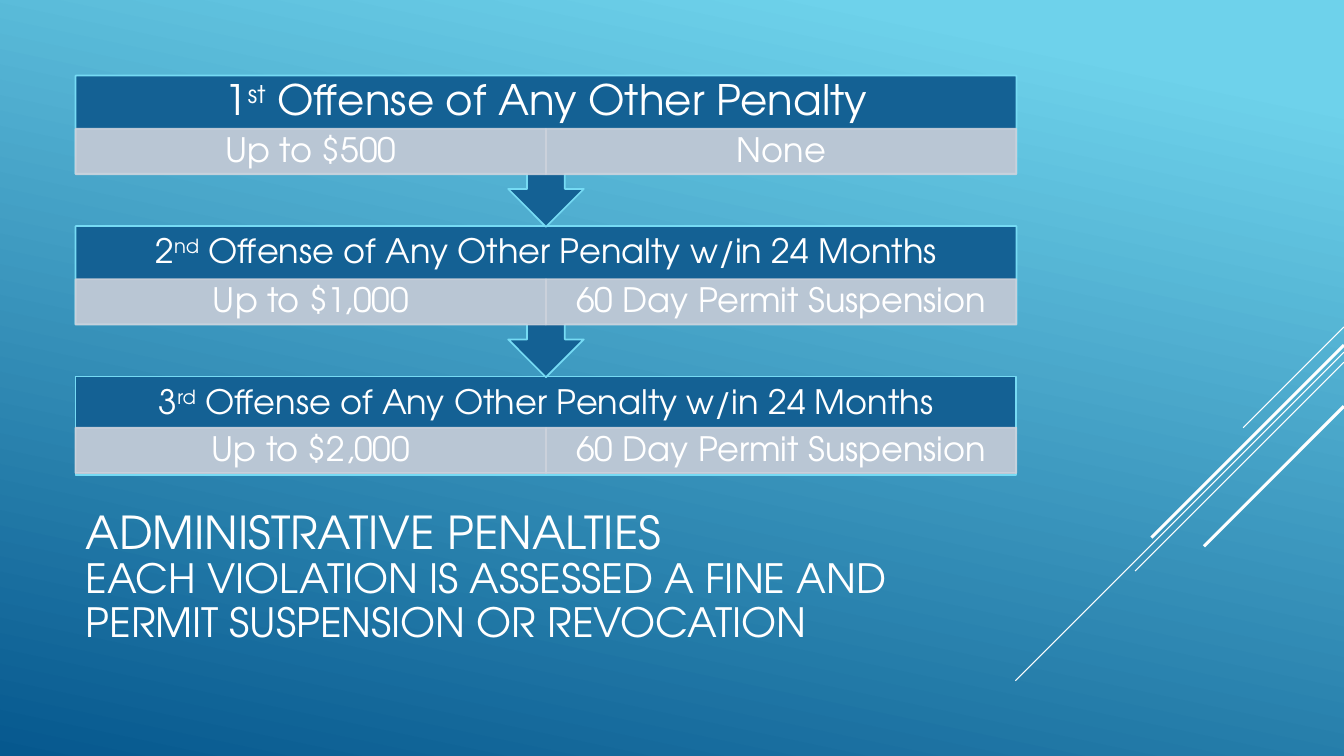
from lxml.etree import SubElement
from pptx import Presentation
from pptx.dml.color import RGBColor
from pptx.enum.shapes import MSO_CONNECTOR as Connector, MSO_SHAPE as Shape
from pptx.enum.text import MSO_ANCHOR as Anchor, PP_ALIGN as Align
from pptx.oxml.ns import qn
from pptx.util import Pt

FONT = "TeX Gyre Adventor"
WHITE, NAVY, AQUA, GRAY = "FFFFFF", "146194", "76DBF4", "CCD2DC"
BOX_LEFT, BOX_TOP, BOX_WIDTH, STEP = 54, 54, 672, 107.5
CALLOUT_HEIGHT, BODY_HEIGHT, HEADER_HEIGHT, CELL_HEIGHT = 108, 70.2, 38, 32.4

OFFENSES = [
    ("1", "st", " Offense of Any Other Penalty", 30, "Up to $500", "None"),
    ("2", "nd", " Offense of Any Other Penalty w/in 24 Months", 24,
     "Up to $1,000", "60 Day Permit Suspension"),
    ("3", "rd", " Offense of Any Other Penalty w/in 24 Months", 24,
     "Up to $2,000", "60 Day Permit Suspension"),
]
STREAKS = [
    (233.5, 72, 0.75),
    (251.5, 234.7, 0.75),
    (258.7, 149.2, 0.75),
    (246.5, 137.5, 2.25),
    (290.2, 100, 2.25),
]


def color(value):
    return RGBColor.from_string(value)


def add_text(paragraph, text, size=24, raised=False):
    run = paragraph.add_run()
    run.text = text
    run.font.size = Pt(size)
    run.font.name = FONT
    run.font.color.rgb = color(WHITE)
    if raised:
        run.font._element.set("baseline", "30000")


def set_frame(shape, margins, align=Align.LEFT, spacing=0.9):
    frame = shape.text_frame
    frame.word_wrap = True
    frame.vertical_anchor = Anchor.MIDDLE
    frame.margin_left, frame.margin_top, frame.margin_right, frame.margin_bottom = map(Pt, margins)
    paragraph = frame.paragraphs[0]
    paragraph.alignment = align
    paragraph.line_spacing = spacing
    return paragraph


def add_box(slide, kind, left, top, width, height, fill, line, opacity=None):
    shape = slide.shapes.add_shape(kind, Pt(left), Pt(top), Pt(width), Pt(height))
    shape.shadow.inherit = False
    shape.fill.solid()
    shape.fill.fore_color.rgb = color(fill)
    shape.line.color.rgb = color(line)
    shape.line.width = Pt(1.25)
    if opacity:
        for tint in shape._element.spPr.iter(qn("a:srgbClr")):
            SubElement(tint, qn("a:alpha"), val=str(opacity * 1000))
    return shape


def add_background(slide):
    fill = slide.background.fill
    fill.gradient()
    fill.gradient_angle = 258
    for stop, position, value in zip(fill.gradient_stops, (0.1, 1), ("6ED2EB", "06588E")):
        stop.position = position
        stop.color.rgb = color(value)


def add_streaks(slide, right):
    for top, length, weight in STREAKS:
        line = slide.shapes.add_connector(
            Connector.STRAIGHT, Pt(right), Pt(top), Pt(right - length), Pt(top + length))
        line.line.color.rgb = color(WHITE)
        line.line.width = Pt(weight)
        SubElement(line._element.spPr, qn("a:effectLst"))


def add_offense(slide, left, top, width, offense, last):
    number, suffix, title, size, *penalties = offense
    kind = Shape.RECTANGLE if last else Shape.DOWN_ARROW_CALLOUT
    height = BODY_HEIGHT if last else CALLOUT_HEIGHT
    header = add_box(slide, kind, left, top, width, height, NAVY, AQUA)
    paragraph = set_frame(header, (14, 0, 14, BODY_HEIGHT - HEADER_HEIGHT), Align.CENTER)
    add_text(paragraph, number, size)
    add_text(paragraph, suffix, size, raised=True)
    add_text(paragraph, title, size)

    cell_top = top + (36.5 if last else HEADER_HEIGHT)
    cell_width = width / len(penalties)
    for column, penalty in enumerate(penalties):
        cell = add_box(slide, Shape.RECTANGLE, left + column * cell_width, cell_top,
                       cell_width, CELL_HEIGHT, GRAY, GRAY, opacity=90)
        add_text(set_frame(cell, (14, 2, 14, 2), Align.CENTER), penalty)


def add_title(slide, left, top, width, height):
    box = slide.shapes.add_textbox(Pt(left), Pt(top), Pt(width), Pt(height))
    paragraph = set_frame(box, (7.2, 3.6, 7.2, 3.6))
    add_text(paragraph, "ADMINISTRATIVE PENALTIES", 32.4)
    paragraph.add_line_break()
    add_text(paragraph, "EACH VIOLATION IS ASSESSED A FINE AND PERMIT SUSPENSION OR REVOCATION", 28.8)


def main():
    presentation = Presentation()
    presentation.slide_width, presentation.slide_height = Pt(960), Pt(540)
    slide = presentation.slides.add_slide(presentation.slide_layouts[6])
    add_background(slide)
    add_streaks(slide, 960)
    add_title(slide, BOX_LEFT, 353.5, BOX_WIDTH, 118.8)
    for index, offense in reversed(list(enumerate(OFFENSES))):
        add_offense(slide, BOX_LEFT, BOX_TOP + index * STEP, BOX_WIDTH, offense,
                    last=index == len(OFFENSES) - 1)
    presentation.save("out.pptx")


if __name__ == "__main__":
    main()
